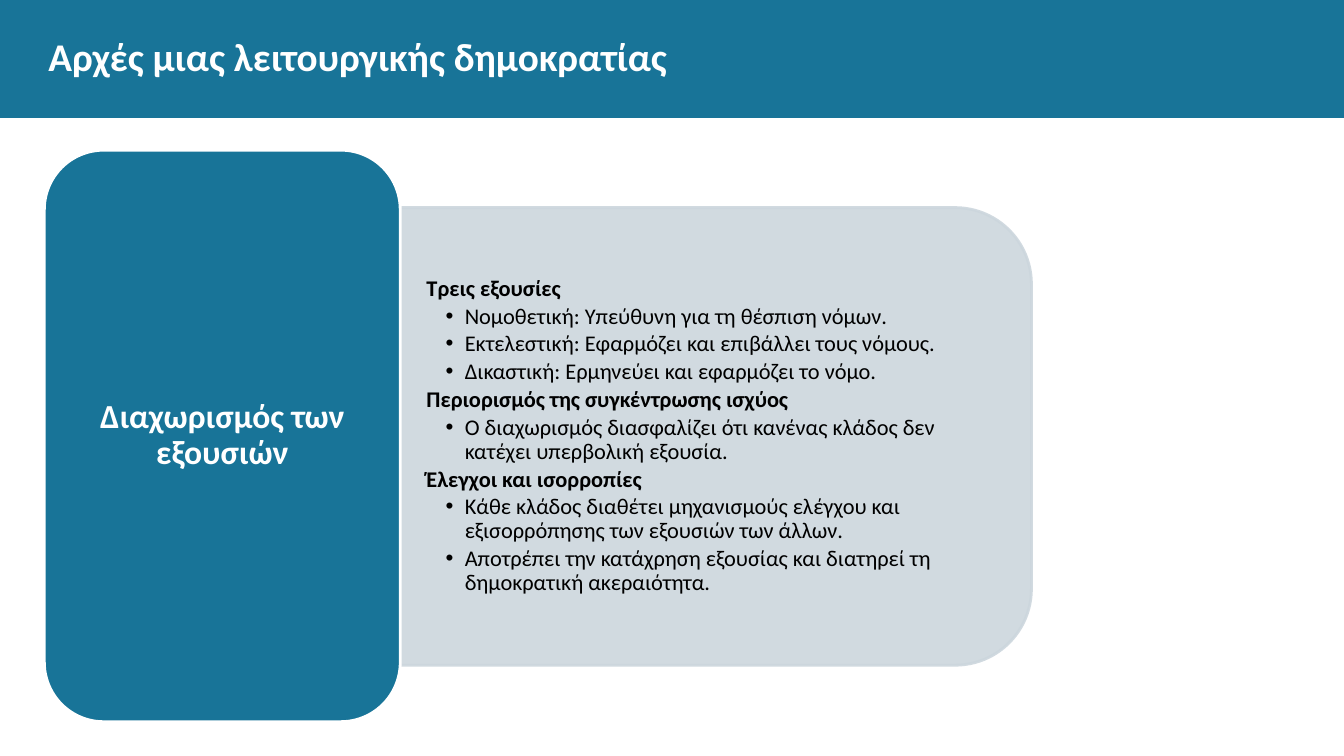
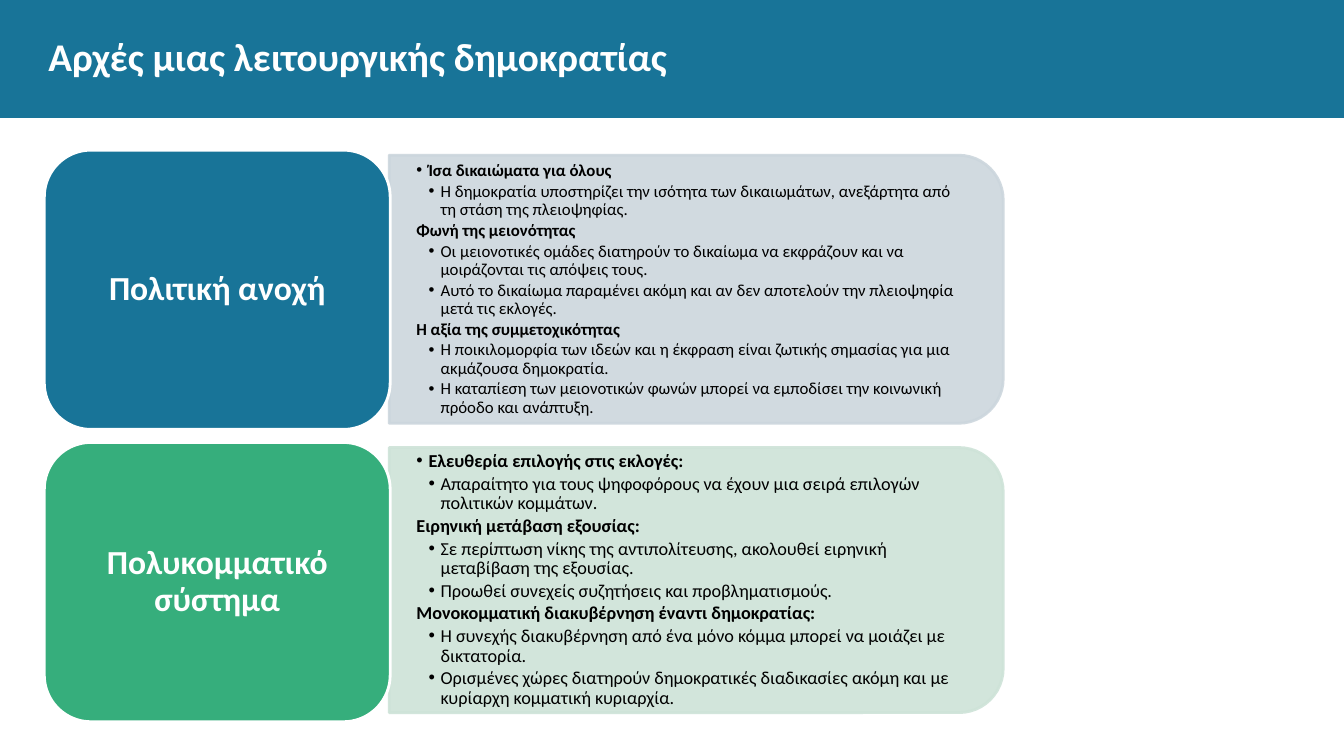
from lxml import etree
from pptx import Presentation
from pptx import util as u
from pptx.dml.color import RGBColor
from pptx.enum import shapes, text
from pptx.oxml import ns

BLUE = RGBColor(0x18, 0x74, 0x98)
GREEN = RGBColor(0x36, 0xAE, 0x7C)
PALE_BLUE = RGBColor(0xCC, 0xD6, 0xDD)
PALE_GREEN = RGBColor(0xCE, 0xE3, 0xD8)
BLACK = RGBColor(0, 0, 0)
WHITE = RGBColor(0xFF, 0xFF, 0xFF)
FONT = "Calibri"
TITLE = "Αρχές μιας λειτουργικής δημοκρατίας"
SLIDE_WIDTH = 13.33
LABEL_LEFT = 0.44
CORNER_INSET = 0.05

POWERS = [
    ("Τρεις εξουσίες", [
        "Νομοθετική: Υπεύθυνη για τη θέσπιση νόμων.",
        "Εκτελεστική: Εφαρμόζει και επιβάλλει τους νόμους.",
        "Δικαστική: Ερμηνεύει και εφαρμόζει το νόμο.",
    ]),
    ("Περιορισμός της συγκέντρωσης ισχύος", [
        "Ο διαχωρισμός διασφαλίζει ότι κανένας κλάδος δεν κατέχει υπερβολική εξουσία.",
    ]),
    ("Έλεγχοι και ισορροπίες", [
        "Κάθε κλάδος διαθέτει μηχανισμούς ελέγχου και εξισορρόπησης των εξουσιών των άλλων.",
        "Αποτρέπει την κατάχρηση εξουσίας και διατηρεί τη δημοκρατική ακεραιότητα.",
    ]),
]
TOLERANCE = [
    ("Ίσα δικαιώματα για όλους", [
        "Η δημοκρατία υποστηρίζει την ισότητα των δικαιωμάτων, ανεξάρτητα από τη στάση της πλειοψηφίας.",
    ]),
    ("Φωνή της μειονότητας", [
        "Οι μειονοτικές ομάδες διατηρούν το δικαίωμα να εκφράζουν και να μοιράζονται τις απόψεις τους.",
        "Αυτό το δικαίωμα παραμένει ακόμη και αν δεν αποτελούν την πλειοψηφία μετά τις εκλογές.",
    ]),
    ("Η αξία της συμμετοχικότητας", [
        "Η ποικιλομορφία των ιδεών και η έκφραση είναι ζωτικής σημασίας για μια ακμάζουσα δημοκρατία.",
        "Η καταπίεση των μειονοτικών φωνών μπορεί να εμποδίσει την κοινωνική πρόοδο και ανάπτυξη.",
    ]),
]
PARTIES = [
    ("Ελευθερία επιλογής στις εκλογές:", [
        "Απαραίτητο για τους ψηφοφόρους να έχουν μια σειρά επιλογών πολιτικών κομμάτων.",
    ]),
    ("Ειρηνική μετάβαση εξουσίας:", [
        "Σε περίπτωση νίκης της αντιπολίτευσης, ακολουθεί ειρηνική μεταβίβαση της εξουσίας.",
        "Προωθεί συνεχείς συζητήσεις και προβληματισμούς.",
    ]),
    ("Μονοκομματική διακυβέρνηση έναντι δημοκρατίας:", [
        "Η συνεχής διακυβέρνηση από ένα μόνο κόμμα μπορεί να μοιάζει με δικτατορία.",
        "Ορισμένες χώρες διατηρούν δημοκρατικές διαδικασίες ακόμη και με κυρίαρχη κομματική κυριαρχία.",
    ]),
]


def apply(target, **values):
    for name, value in values.items():
        setattr(target, name, value)


def inches(*lengths):
    return [u.Inches(length) for length in lengths]


class Deck:
    def __init__(self):
        self.presentation = Presentation()
        apply(self.presentation, slide_width=u.Inches(SLIDE_WIDTH), slide_height=u.Inches(7.5))
        self.layout = self.presentation.slide_layouts.get_by_name("Title Only")
        self.slide = None
        self.has_band = False

    def start_slide(self, title):
        self.slide = self.presentation.slides.add_slide(self.layout)
        if not self.has_band:
            self.add_band()
        placeholder = self.slide.shapes.title
        left, top, width, height = inches(0.48, 0.18, 12.46, 0.74)
        apply(placeholder, left=left, top=top, width=width, height=height)
        self.format_frame(placeholder.text_frame, 0, 0)
        paragraph = placeholder.text_frame.paragraphs[0]
        paragraph.alignment = text.PP_ALIGN.LEFT
        self.add_words(paragraph, title, 28, WHITE, True)

    def add_band(self):
        band = self.add_block(shapes.MSO_SHAPE.RECTANGLE, (0, 0, SLIDE_WIDTH, 1.17), BLUE)
        band.element.nvSpPr.cNvPr.set("id", "20")
        self.layout.placeholders[0].element.addprevious(band.element)
        self.has_band = True

    def add_block(self, preset, box, fill, line=None):
        shape = self.slide.shapes.add_shape(preset, *inches(*box))
        shape.shadow.inherit = False
        shape.fill.solid()
        shape.fill.fore_color.rgb = fill
        if line is None:
            shape.line.fill.background()
        else:
            shape.line.color.rgb = line
            shape.line.width = u.Pt(2)
        return shape

    def format_frame(self, frame, side, edge):
        side, edge = inches(side, edge)
        apply(frame, word_wrap=True, auto_size=text.MSO_AUTO_SIZE.NONE,
              vertical_anchor=text.MSO_ANCHOR.MIDDLE, margin_left=side,
              margin_right=side, margin_top=edge, margin_bottom=edge)

    def add_words(self, paragraph, words, size, color, bold):
        run = paragraph.add_run()
        run.text = words
        apply(run.font, name=FONT, size=u.Pt(size), bold=bold)
        run.font.color.rgb = color

    def add_label(self, words, box, color):
        label = self.add_block(shapes.MSO_SHAPE.ROUNDED_RECTANGLE, box, color, WHITE)
        self.format_frame(label.text_frame, 0.1, 0.05)
        paragraph = label.text_frame.paragraphs[0]
        apply(paragraph, alignment=text.PP_ALIGN.CENTER, line_spacing=0.9)
        self.add_words(paragraph, words, 24, WHITE, True)

    def add_panel(self, box, color):
        left, top, width, height = box
        turned = (left + (width - height) / 2, top + (height - width) / 2, height, width)
        panel = self.add_block(shapes.MSO_SHAPE.ROUND_2_SAME_RECTANGLE, turned, color, color)
        panel.rotation = 90
        for tint in panel.element.spPr.iter(ns.qn("a:srgbClr")):
            etree.SubElement(tint, ns.qn("a:alpha"), val="90000")

    def add_outline(self, sections, box, size, indent, first_bullet):
        left, top, width, height = box
        inset = height * CORNER_INSET
        text_box = self.slide.shapes.add_textbox(
            *inches(left, top + inset, width - inset, height - 2 * inset))
        frame = text_box.text_frame
        self.format_frame(frame, 0.27, 0.14)
        lines = []
        for heading, points in sections:
            lines.append((heading, 1, first_bullet and not lines))
            lines += [(point, 2, True) for point in points]
        for number, (words, level, bullet) in enumerate(lines):
            paragraph = frame.add_paragraph() if number else frame.paragraphs[0]
            apply(paragraph, level=level, line_spacing=0.9, space_after=u.Pt(size * 0.16),
                  alignment=text.PP_ALIGN.LEFT)
            self.add_words(paragraph, words, size, BLACK, level == 1)
            self.indent(paragraph, level * indent, indent, bullet)

    def indent(self, paragraph, margin, hanging, bullet):
        properties = paragraph._p.get_or_add_pPr()
        properties.set("marL", str(u.Inches(margin)))
        properties.set("indent", str(-u.Inches(hanging)))
        if bullet:
            color = etree.SubElement(properties, ns.qn("a:buClr"))
            etree.SubElement(color, ns.qn("a:srgbClr"), val=str(BLACK))
            etree.SubElement(properties, ns.qn("a:buFont"), typeface="Arial")
            etree.SubElement(properties, ns.qn("a:buChar"), char="•")

    def add_topic(self, label, sections, label_box, panel_box, colors, size, indent, first_bullet):
        strong, pale = colors
        self.add_panel(panel_box, pale)
        self.add_outline(sections, panel_box, size, indent, first_bullet)
        self.add_label(label, label_box, strong)


def main():
    deck = Deck()
    blues, greens = (BLUE, PALE_BLUE), (GREEN, PALE_GREEN)

    deck.start_slide(TITLE)
    deck.add_topic("Διαχωρισμός των εξουσιών", POWERS, (LABEL_LEFT, 1.49, 3.53, 5.67),
                   (3.96, 2.06, 6.27, 4.54), blues, 16, 0.19, False)

    deck.start_slide(TITLE)
    topics = [
        ("Πολιτική ανοχή", TOLERANCE, 1.49, 1.54, 2.66, blues, 12),
        ("Πολυκομματικό σύστημα", PARTIES, 4.39, 4.44, 2.63, greens, 13),
    ]
    for label, sections, label_top, panel_top, panel_height, colors, size in topics:
        deck.add_topic(label, sections, (LABEL_LEFT, label_top, 3.43, 2.77),
                       (3.86, panel_top, 6.09, panel_height), colors, size, 0.12, True)

    deck.presentation.save("out.pptx")


if __name__ == "__main__":
    main()
